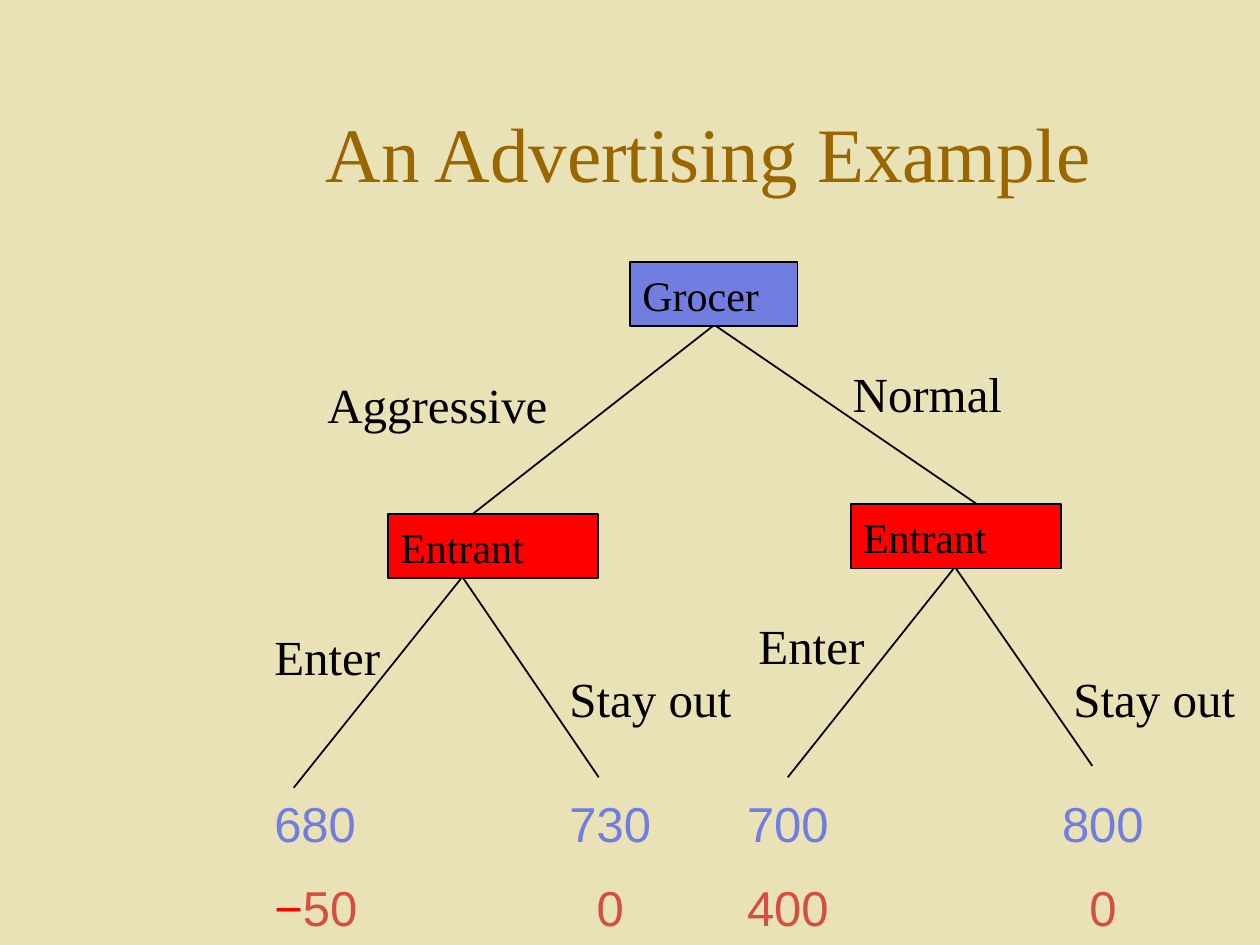
from pptx import Presentation
from pptx.dml.color import RGBColor
from pptx.enum.shapes import MSO_CONNECTOR, MSO_SHAPE
from pptx.enum.text import MSO_ANCHOR as ANCHOR, PP_ALIGN as ALIGN
from pptx.oxml.ns import qn
from pptx.util import Cm, Pt

COLORS = dict(bg="E9E2B6", title="996600", black="000000", blue="727DE0",
              red="FF0000", brick="D54F41")
SERIF, SANS = "Times New Roman", "Arial"

# Content: positions in cm
TITLE = "An Advertising Example"
# Player, fill, left, top, width
NODES = [("Grocer", "blue", 12.7, 5.28, 3.38),
         ("Entrant", "red", 7.82, 10.36, 4.24),
         ("Entrant", "red", 17.15, 10.16, 4.24)]
# Fork point, then the two branch ends
FORKS = [((14.4, 6.55), [(9.53, 10.36), (19.69, 10.16)]),
         ((9.32, 11.63), [(5.92, 15.88), (12.07, 15.67)]),
         ((19.25, 11.43), [(15.88, 15.67), (22.02, 15.44)])]
# Action, left, top, width
ACTIONS = [("Aggressive", 6.35, 7.42, 5.28), ("Normal", 16.94, 7.19, 3.61),
           ("Enter", 5.28, 12.5, 2.97), ("Stay out", 11.23, 13.34, 4.01),
           ("Enter", 15.04, 12.27, 2.97), ("Stay out", 21.39, 13.34, 4.01)]
# Left, first payoff, runs of the second payoff, its indent
PAYOFFS = [(5.28, "680", [("−", "red"), ("50", "brick")], 0),
           (11.23, "730", [("0", "brick")], 0.55),
           (14.81, "700", [("400", "brick")], 0),
           (21.16, "800", [("0", "brick")], 0.55)]
NODE_H, ACTION_H = 1.3, 1.45
PAYOFF_TOP, PAYOFF_W, PAYOFF_H = 15.82, 2.97, 3.23


def rgb(name):
    return RGBColor.from_string(COLORS[name])


def box(left, top, width, height):
    return [Cm(v) for v in (left, top, width, height)]


def write(sp, paragraphs, size=28, font=SERIF, align=ALIGN.LEFT,
          anchor=ANCHOR.BOTTOM, gap=0, indent=0):
    """Fill a shape with paragraphs, each a list of (text, colour) runs."""
    tf = sp.text_frame
    tf.word_wrap, tf.vertical_anchor = True, anchor
    for i, runs in enumerate(paragraphs):
        p = tf.add_paragraph() if i else tf.paragraphs[0]
        p.alignment = align
        if i:
            p.space_before = Pt(gap)
            p._p.get_or_add_pPr().set("marL", str(Cm(indent)))
        for text, color in runs:
            r = p.add_run()
            r.text = text
            r.font.size, r.font.name = Pt(size), font
            r.font.color.rgb = rgb(color)


prs = Presentation()
prs.slide_width, prs.slide_height = Cm(25.4), Cm(19.05)
s = prs.slides.add_slide(prs.slide_layouts[5])
s.background.fill.solid()
s.background.fill.fore_color.rgb = rgb("bg")

# Title
title = s.shapes.title
title.left, title.top, title.width, title.height = box(3.81, 1.47, 20.95, 3.18)
write(title, [[(TITLE, "title")]], size=44, align=ALIGN.CENTER,
      anchor=ANCHOR.MIDDLE)

# Branches
for start, ends in FORKS:
    for end in ends:
        line = s.shapes.add_connector(MSO_CONNECTOR.STRAIGHT,
                                      *box(*start, *end))
        line.line.color.rgb, line.line.width = rgb("black"), Pt(1)
        sp_pr = line._element.spPr
        sp_pr.append(sp_pr.makeelement(qn("a:effectLst"), {}))

# Players
for name, fill, left, top, width in NODES:
    sp = s.shapes.add_shape(MSO_SHAPE.RECTANGLE,
                            *box(left, top, width, NODE_H))
    sp.shadow.inherit = False
    sp.fill.solid()
    sp.fill.fore_color.rgb = rgb(fill)
    sp.line.color.rgb, sp.line.width = rgb("black"), Pt(1)
    write(sp, [[(name, "black")]], size=24)

# Actions
for text, left, top, width in ACTIONS:
    sp = s.shapes.add_textbox(*box(left, top, width, ACTION_H))
    write(sp, [[(text, "black")]])

# Payoffs
for left, first, second, indent in PAYOFFS:
    sp = s.shapes.add_textbox(*box(left, PAYOFF_TOP, PAYOFF_W, PAYOFF_H))
    write(sp, [[(first, "blue")], second], font=SANS, anchor=ANCHOR.MIDDLE,
          gap=14, indent=indent)

prs.save("out.pptx")
